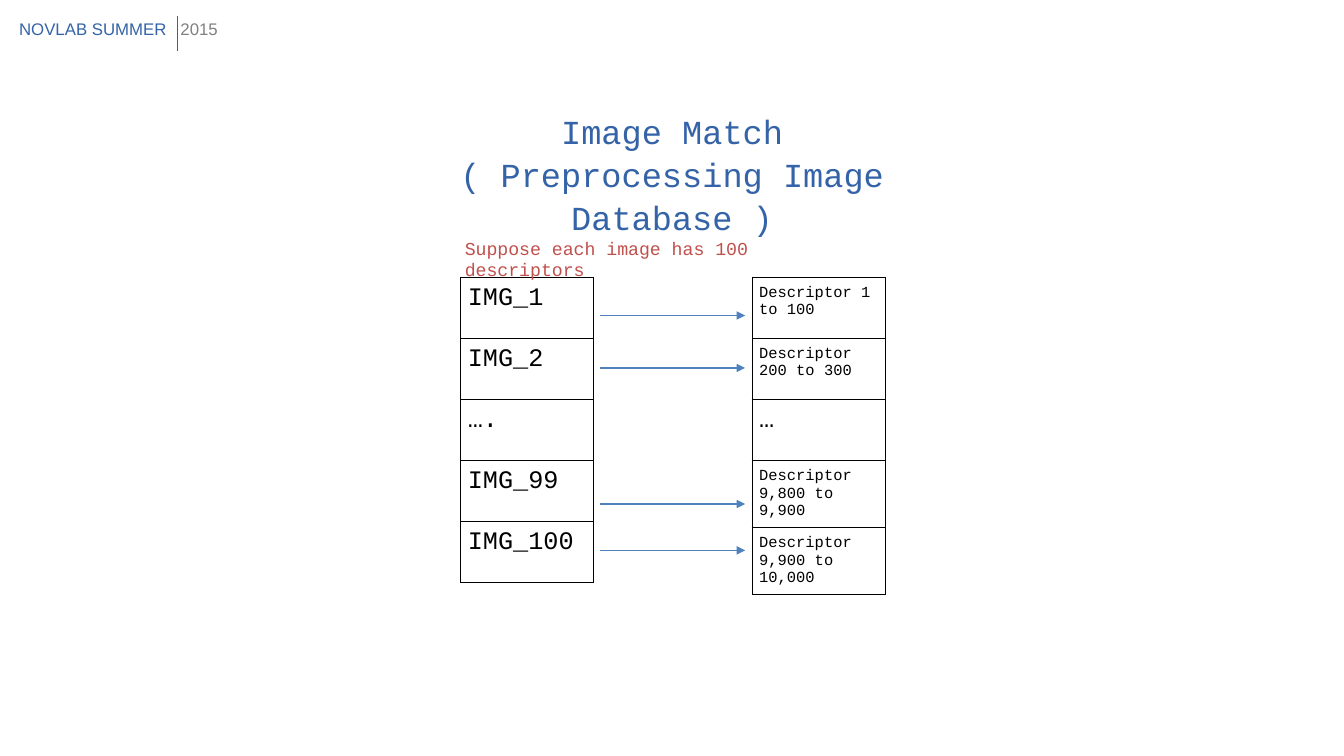
from lxml.etree import SubElement
from pptx import Presentation
from pptx.dml.color import RGBColor
from pptx.enum.shapes import MSO_CONNECTOR
from pptx.enum.text import PP_ALIGN
from pptx.oxml.ns import qn
from pptx.util import Inches, Pt

BLUE, GREY, RED, BLACK, ARROW = "3563A8", "808080", "C0504D", "000000", "4F81BD"
MONO, SANS = "Courier New", "Arial"

TEXTS = [
    dict(text="Image Match ( Preprocessing Image Database )", area=(4.02, 1.08, 5.29, 0.92),
         size=24, font=MONO, color=BLUE, align=PP_ALIGN.CENTER, spacing=1.06, wrap=True),
    dict(text="NOVLAB SUMMER", area=(0.19, 0.19, 1.54, 0.29), size=12, font=SANS, color=BLUE),
    dict(text="2015", area=(1.79, 0.19, 0.48, 0.29), size=12, font=SANS, color=GREY),
    dict(text="Suppose each image has 100 descriptors", area=(4.56, 2.3, 3.44, 0.35),
         size=13, font=MONO, color=RED, inset=0.05, wrap=True),
]
IMAGES = [("IMG_1", 18), ("IMG_2", 18), ("….", 18), ("IMG_99", 18), ("IMG_100", 18)]
DESCRIPTORS = [
    ("Descriptor 1 to 100", 11),
    ("Descriptor 200 to 300", 11),
    ("…", 18),
    ("Descriptor 9,800 to 9,900", 11),
    ("Descriptor 9,900 to 10,000", 11),
]
TABLES = [(4.57, IMAGES), (7.46, DESCRIPTORS)]
TABLE_TOP, TABLE_WIDTH, TABLE_HEIGHT = 2.75, 1.32, 3.03
ARROW_LEFT, ARROW_RIGHT = 5.95, 7.39
ARROW_HEIGHTS = [3.13, 3.65, 5, 5.46]


def rgb(value):
    return RGBColor.from_string(value)


def add_span(para, text, size, font, color):
    span = para.add_run()
    span.text = text
    span.font.size = Pt(size)
    span.font.name = font
    span.font.color.rgb = rgb(color)


def set_insets(target, inset):
    target.margin_left = target.margin_right = Inches(inset)
    target.margin_top = target.margin_bottom = Inches(inset)


def add_text(page, text, area, size, font, color, align=PP_ALIGN.LEFT,
             spacing=None, inset=0, wrap=False):
    box = page.shapes.add_textbox(*map(Inches, area))
    frame = box.text_frame
    frame.word_wrap = wrap
    set_insets(frame, inset)
    para = frame.paragraphs[0]
    para.alignment = align
    para.line_spacing = spacing
    add_span(para, text, size, font, color)


def add_line(page, start, end, color, width, arrow=False):
    line = page.shapes.add_connector(MSO_CONNECTOR.STRAIGHT, *map(Inches, start + end))
    line.line.color.rgb = rgb(color)
    line.line.width = Pt(width)
    if arrow:
        SubElement(line.line._get_or_add_ln(), qn("a:tailEnd"), type="triangle")
    SubElement(line._element.spPr, qn("a:effectLst"))


def add_borders(cell):
    properties = cell._tc.get_or_add_tcPr()
    for position, side in enumerate(("a:lnL", "a:lnR", "a:lnT", "a:lnB")):
        border = properties.makeelement(qn(side), {"w": str(Pt(1))})
        fill = SubElement(border, qn("a:solidFill"))
        SubElement(fill, qn("a:srgbClr"), val=BLACK)
        properties.insert(position, border)


def add_column(page, left, entries):
    frame = page.shapes.add_table(len(entries), 1, Inches(left), Inches(TABLE_TOP),
                                  Inches(TABLE_WIDTH), Inches(TABLE_HEIGHT))
    table = frame.table
    table.first_row = table.horz_banding = False
    for row, (text, size) in enumerate(entries):
        cell = table.cell(row, 0)
        set_insets(cell, 0.07)
        cell.fill.background()
        add_borders(cell)
        add_span(cell.text_frame.paragraphs[0], text, size, MONO, BLACK)


def main():
    deck = Presentation()
    deck.slide_width, deck.slide_height = Inches(13.33), Inches(7.5)
    page = deck.slides.add_slide(deck.slide_layouts[6])
    add_line(page, (1.76, 0.16), (1.76, 0.51), BLUE, 0.5)
    for left, entries in TABLES:
        add_column(page, left, entries)
    for item in TEXTS:
        add_text(page, **item)
    for height in ARROW_HEIGHTS:
        add_line(page, (ARROW_LEFT, height), (ARROW_RIGHT, height), ARROW, 1, arrow=True)
    deck.save("out.pptx")


if __name__ == "__main__":
    main()
